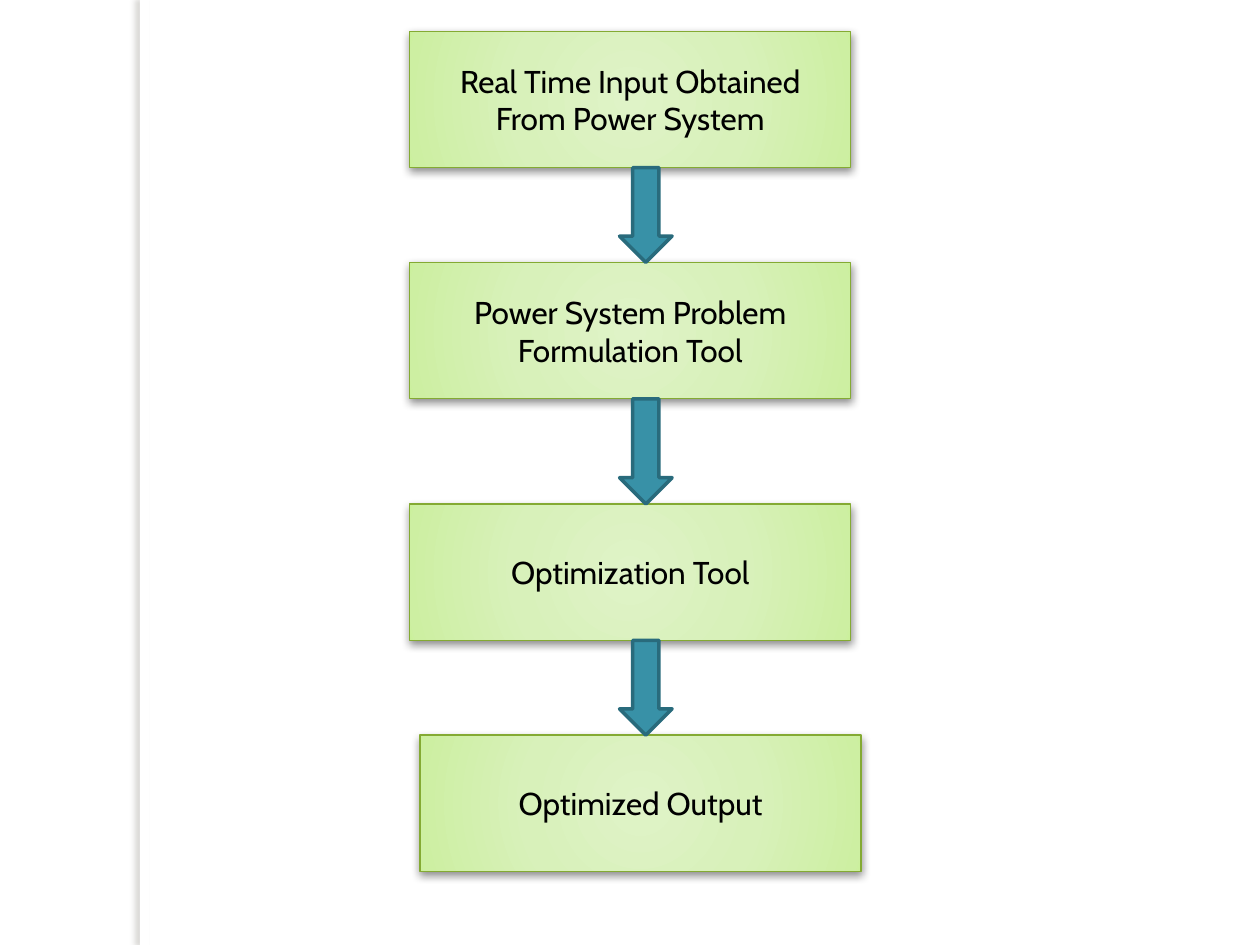
from itertools import pairwise

from lxml.etree import SubElement
from pptx import Presentation
from pptx.dml.color import RGBColor
from pptx.enum.shapes import MSO_SHAPE
from pptx.enum.text import MSO_ANCHOR, PP_ALIGN
from pptx.oxml import parse_xml
from pptx.oxml.ns import nsdecls, qn
from pptx.util import Cm, Pt

WHITE = RGBColor(0xFF, 0xFF, 0xFF)
BLACK = RGBColor(0x00, 0x00, 0x00)
GREEN_LINE = RGBColor(0x84, 0xAA, 0x33)
TEAL = RGBColor(0x38, 0x91, 0xA7)
DARK_TEAL = RGBColor(0x29, 0x6B, 0x7C)
EDGE_SHADOW = RGBColor(0x73, 0x6F, 0x63)
STAGE_STOPS = [
    (0, RGBColor(0xDF, 0xF3, 0xC7)),
    (50, RGBColor(0xD8, 0xF1, 0xBA)),
    (97, RGBColor(0xCD, 0xEF, 0xA2)),
    (100, RGBColor(0xCA, 0xF1, 0x99)),
]

STAGE_WIDTH, STAGE_HEIGHT = Cm(8.89), Cm(2.75)
ARROW_LEFT, ARROW_WIDTH = Cm(12.49), Cm(1.06)
STAGES = [
    ("Real Time Input Obtained From Power System", Cm(8.26), Cm(0.63)),
    ("Power System Problem Formulation Tool", Cm(8.26), Cm(5.29)),
    ("Optimization Tool", Cm(8.26), Cm(10.16)),
    ("Optimized Output", Cm(8.47), Cm(14.82)),
]


def set_shadow(shape, color, opacity, blur, distance, angle):
    """Give the shape an outer shadow; opacity in percent, angle in degrees."""
    shape.shadow.inherit = False
    effects = shape.element.spPr.find(qn("a:effectLst"))
    outer = SubElement(effects, qn("a:outerShdw"), blurRad=str(blur),
                       dist=str(distance), dir=str(angle * 60000),
                       algn="ctr", rotWithShape="0")
    shade = SubElement(outer, qn("a:srgbClr"), val=str(color))
    SubElement(shade, qn("a:alpha"), val=str(opacity * 1000))


def set_radial_fill(shape, stops):
    """Fill the shape with a circular gradient spreading from its centre."""
    stop_xml = "".join(
        f'<a:gs pos="{position * 1000}"><a:srgbClr val="{color}"/></a:gs>'
        for position, color in stops)
    gradient = parse_xml(
        f'<a:gradFill {nsdecls("a")} rotWithShape="1"><a:gsLst>{stop_xml}</a:gsLst>'
        '<a:path path="circle"><a:fillToRect l="50000" t="50000" r="50000" b="50000"/>'
        '</a:path></a:gradFill>')
    shape.fill.background()
    properties = shape.element.spPr
    properties.replace(properties.find(qn("a:noFill")), gradient)


def add_page_edge(slide, left, top, width, height):
    edge = slide.shapes.add_shape(MSO_SHAPE.RECTANGLE, left, top, width, height)
    edge.fill.solid()
    edge.fill.fore_color.rgb = WHITE
    edge.line.fill.background()
    set_shadow(edge, EDGE_SHADOW, 25, Pt(3), Pt(3), 180)


def add_stage(slide, label, left, top, width, height):
    stage = slide.shapes.add_shape(MSO_SHAPE.RECTANGLE, left, top, width, height)
    set_radial_fill(stage, STAGE_STOPS)
    stage.line.color.rgb = GREEN_LINE
    stage.line.width = Pt(0.75)
    set_shadow(stage, BLACK, 43, Pt(5), Pt(2), 90)

    frame = stage.text_frame
    frame.word_wrap = True
    frame.vertical_anchor = MSO_ANCHOR.MIDDLE
    frame.text = label
    paragraph = frame.paragraphs[0]
    paragraph.alignment = PP_ALIGN.CENTER
    paragraph.font.name = "Cabin"
    paragraph.font.size = Pt(18)
    paragraph.font.color.rgb = BLACK


def add_flow_arrow(slide, left, top, width, height):
    arrow = slide.shapes.add_shape(MSO_SHAPE.DOWN_ARROW, left, top, width, height)
    arrow.shadow.inherit = False
    arrow.fill.solid()
    arrow.fill.fore_color.rgb = TEAL
    arrow.line.color.rgb = DARK_TEAL
    arrow.line.width = Pt(2)


def add_flowchart(slide):
    for label, left, top in STAGES:
        add_stage(slide, label, left, top, STAGE_WIDTH, STAGE_HEIGHT)
    tops = [top for _, _, top in STAGES]
    for top, next_top in pairwise(tops):
        bottom = top + STAGE_HEIGHT
        add_flow_arrow(slide, ARROW_LEFT, bottom, ARROW_WIDTH, next_top - bottom)


def main():
    presentation = Presentation()
    presentation.slide_width = Cm(25.4)
    presentation.slide_height = Cm(19.05)
    blank_layout = presentation.slide_layouts[6]
    slide = presentation.slides.add_slide(blank_layout)
    slide.background.fill.solid()
    slide.background.fill.fore_color.rgb = WHITE
    add_page_edge(slide, Cm(2.82), 0, Cm(0.2), presentation.slide_height)
    add_flowchart(slide)
    presentation.save("out.pptx")


if __name__ == "__main__":
    main()
